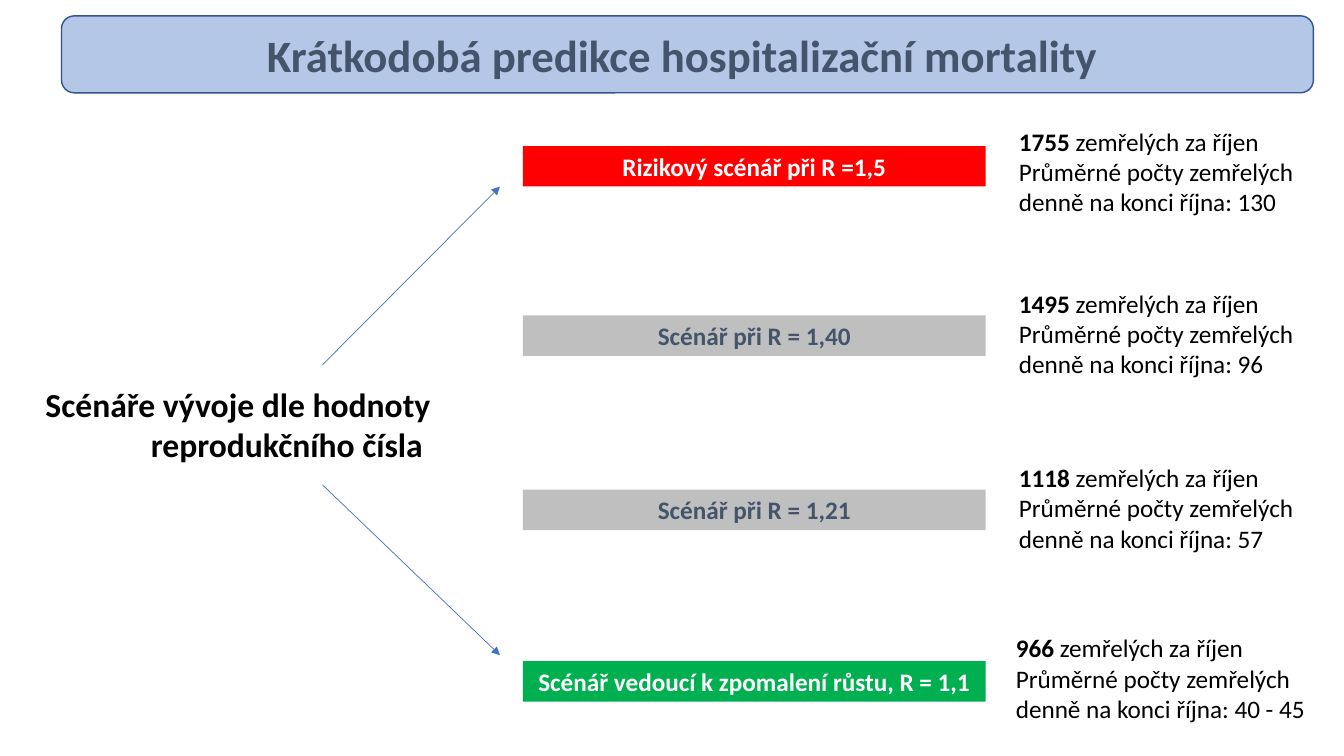
"""Build a slide of hospital mortality scenarios by reproduction number."""
from lxml import etree
from pptx import Presentation
from pptx.dml.color import RGBColor
from pptx.enum.shapes import MSO_CONNECTOR, MSO_SHAPE
from pptx.enum.text import MSO_ANCHOR, MSO_AUTO_SIZE, PP_ALIGN
from pptx.oxml.ns import qn
from pptx.util import Cm, Pt

RECT, ROUND = MSO_SHAPE.RECTANGLE, MSO_SHAPE.ROUNDED_RECTANGLE
LINE = MSO_CONNECTOR.STRAIGHT
TOP, MIDDLE = MSO_ANCHOR.TOP, MSO_ANCHOR.MIDDLE
LEFT, CENTER, RIGHT = PP_ALIGN.LEFT, PP_ALIGN.CENTER, PP_ALIGN.RIGHT
GROW, FIXED = MSO_AUTO_SIZE.SHAPE_TO_FIT_TEXT, MSO_AUTO_SIZE.NONE

FONT = "Calibri"
BLACK, WHITE, SLATE = "000000", "FFFFFF", "44546A"
RED, GREEN, GREY = "FF0000", "00B050", "BFBFBF"
PALE, NAVY, BLUE = "B4C7E7", "325491", "4472C4"

TITLE = "Krátkodobá predikce hospitalizační mortality "
LABEL = "Scénáře vývoje dle hodnoty reprodukčního čísla "
DEATHS = " zemřelých za říjen"
DAILY = "Průměrné počty zemřelých denně na konci října: "

# Bar text, fill, font colour, bar top, deaths, daily count, note left, note top
CASES = [
    ("Rizikový scénář při R =1,5", RED, WHITE, 3.68, "1755", "130", 25.43, 3.05),
    ("Scénář při R = 1,40", GREY, SLATE, 7.95, "1495", "96", 25.43, 7.14),
    ("Scénář při R = 1,21", GREY, SLATE, 12.34, "1118", "57", 25.43, 11.53),
    ("Scénář vedoucí k zpomalení růstu, R = 1,1", GREEN, WHITE, 16.66,
     "966", "40 - 45", 25.35, 15.82),
]
ARROWS = [(8.13, 9.19, 12.6, 4.7), (8.13, 12.22, 12.6, 16.51)]


def color(code):
    return RGBColor.from_string(code)


def write(shape, paras, size, ink, align, anchor=TOP, fit=GROW):
    frame = shape.text_frame
    frame.word_wrap = True
    frame.auto_size = fit
    frame.vertical_anchor = anchor
    for i, runs in enumerate(paras):
        para = frame.add_paragraph() if i else frame.paragraphs[0]
        para.alignment = align
        for text, bold in runs:
            run = para.add_run()
            run.text = text
            font = run.font
            font.name, font.size, font.bold = FONT, Pt(size), bold
            font.color.rgb = color(ink)


def block(slide, kind, box, fill, edge=None):
    shape = slide.shapes.add_shape(kind, *map(Cm, box))
    shape.shadow.inherit = False
    shape.fill.solid()
    shape.fill.fore_color.rgb = color(fill)
    if edge:
        shape.line.color.rgb = color(edge)
        shape.line.width = Pt(1)
    else:
        shape.line.fill.background()
    return shape


def arrow(slide, ends):
    link = slide.shapes.add_connector(LINE, *map(Cm, ends))
    link.line.color.rgb = color(BLUE)
    link.line.width = Pt(0.5)
    etree.SubElement(link.line._get_or_add_ln(), qn("a:tailEnd"), type="triangle")
    etree.SubElement(link._element.spPr, qn("a:effectLst"))


def main():
    deck = Presentation()
    deck.slide_width, deck.slide_height = Cm(33.87), Cm(19.05)
    slide = deck.slides.add_slide(deck.slide_layouts[6])

    title = block(slide, ROUND, (1.55, 0.4, 31.55, 1.94), PALE, NAVY)
    write(title, [[(TITLE, True)]], 32, SLATE, CENTER, MIDDLE, FIXED)
    label = slide.shapes.add_textbox(*map(Cm, (0.36, 9.55, 10.74, 2.31)))
    write(label, [[(LABEL, True)]], 24, BLACK, RIGHT)

    for name, fill, ink, top, deaths, daily, left, high in CASES:
        bar = block(slide, RECT, (13.18, top, 11.66, 1.02), fill)
        write(bar, [[(name, True)]], 18, ink, CENTER)
        note = slide.shapes.add_textbox(*map(Cm, (left, high, 8, 2.57)))
        lines = [[(deaths, True), (DEATHS, False)], [(DAILY + daily, False)]]
        write(note, lines, 18, BLACK, LEFT)

    for ends in ARROWS:
        arrow(slide, ends)
    deck.save("out.pptx")


if __name__ == "__main__":
    main()
